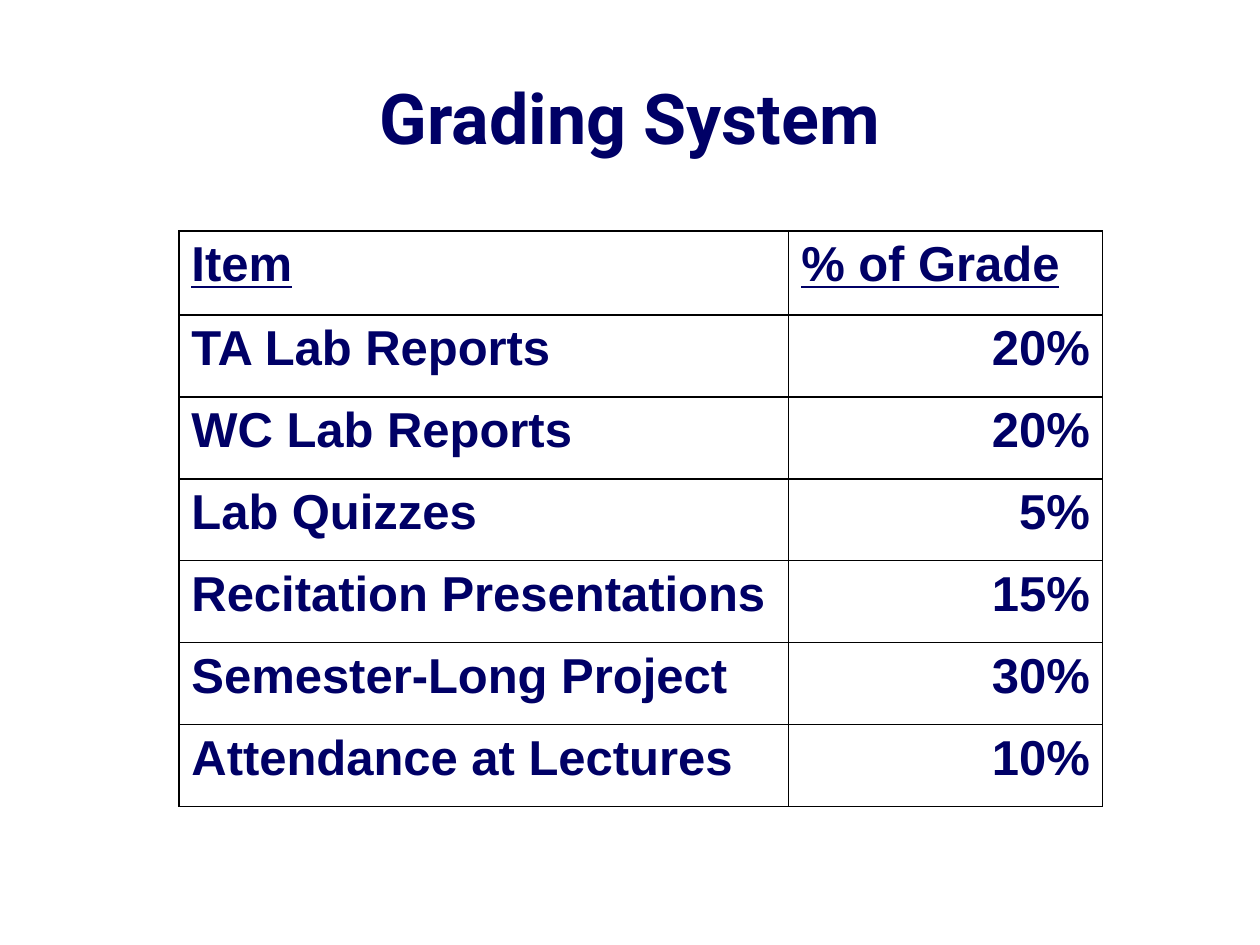
from dataclasses import dataclass

from lxml.etree import SubElement
from pptx import Presentation
from pptx.dml.color import RGBColor
from pptx.enum.text import MSO_ANCHOR, PP_ALIGN
from pptx.oxml.ns import qn
from pptx.util import Pt


@dataclass
class Theme:
    ink: str = "000066"
    border: str = "000000"
    title_font: str = "Roboto"
    body_font: str = "Arial"
    title_size: int = 40
    body_size: int = 28


theme = Theme()


def style_text(para, font_name, size):
    for span in para.runs:
        span.font.name = font_name
        span.font.size = Pt(size)
        span.font.bold = True
        span.font.color.rgb = RGBColor.from_string(theme.ink)


def add_borders(cell):
    properties = cell._tc.get_or_add_tcPr()
    for position, side in enumerate(("lnL", "lnR", "lnT", "lnB")):
        line = SubElement(properties, qn(f"a:{side}"), w=str(Pt(1)))
        properties.insert(position, line)
        fill = SubElement(line, qn("a:solidFill"))
        SubElement(fill, qn("a:srgbClr"), val=theme.border)


grades = [
    ("Item", "% of Grade"),
    ("TA Lab Reports", "20%"),
    ("WC Lab Reports", "20%"),
    ("Lab Quizzes", "5%"),
    ("Recitation Presentations", "15%"),
    ("Semester-Long Project", "30%"),
    ("Attendance at Lectures", "10%"),
]
column_widths = [348.5, 179.3]
header_height = 48
row_height = 46.8
table_height = header_height + row_height * (len(grades) - 1)
hanging_indent = Pt(27)

deck = Presentation()
deck.slide_width = Pt(720)
deck.slide_height = Pt(540)
page = deck.slides.add_slide(deck.slide_layouts[6])

title_box = page.shapes.add_textbox(Pt(36), Pt(21.6), Pt(648), Pt(90))
title_frame = title_box.text_frame
title_frame.word_wrap = True
title_frame.vertical_anchor = MSO_ANCHOR.MIDDLE
title_frame.text = "Grading System"
title_para = title_frame.paragraphs[0]
title_para.alignment = PP_ALIGN.CENTER
style_text(title_para, theme.title_font, theme.title_size)

table = page.shapes.add_table(
    len(grades), len(column_widths),
    Pt(102.2), Pt(132), Pt(sum(column_widths)), Pt(table_height),
).table
table.horz_banding = False
for column, width in zip(table.columns, column_widths):
    column.width = Pt(width)

for row_index, texts in enumerate(grades):
    is_header = row_index == 0
    table.rows[row_index].height = Pt(header_height if is_header else row_height)
    for column_index, text in enumerate(texts):
        cell = table.cell(row_index, column_index)
        cell.fill.background()
        add_borders(cell)
        cell.text_frame.text = text
        para = cell.text_frame.paragraphs[0]
        para_properties = para._p.get_or_add_pPr()
        para_properties.set("marL", str(hanging_indent))
        para_properties.set("indent", str(-hanging_indent))
        is_value = column_index == 1 and not is_header
        para.alignment = PP_ALIGN.RIGHT if is_value else PP_ALIGN.LEFT
        style_text(para, theme.body_font, theme.body_size)
        para.runs[0].font.underline = is_header

deck.save("out.pptx")
